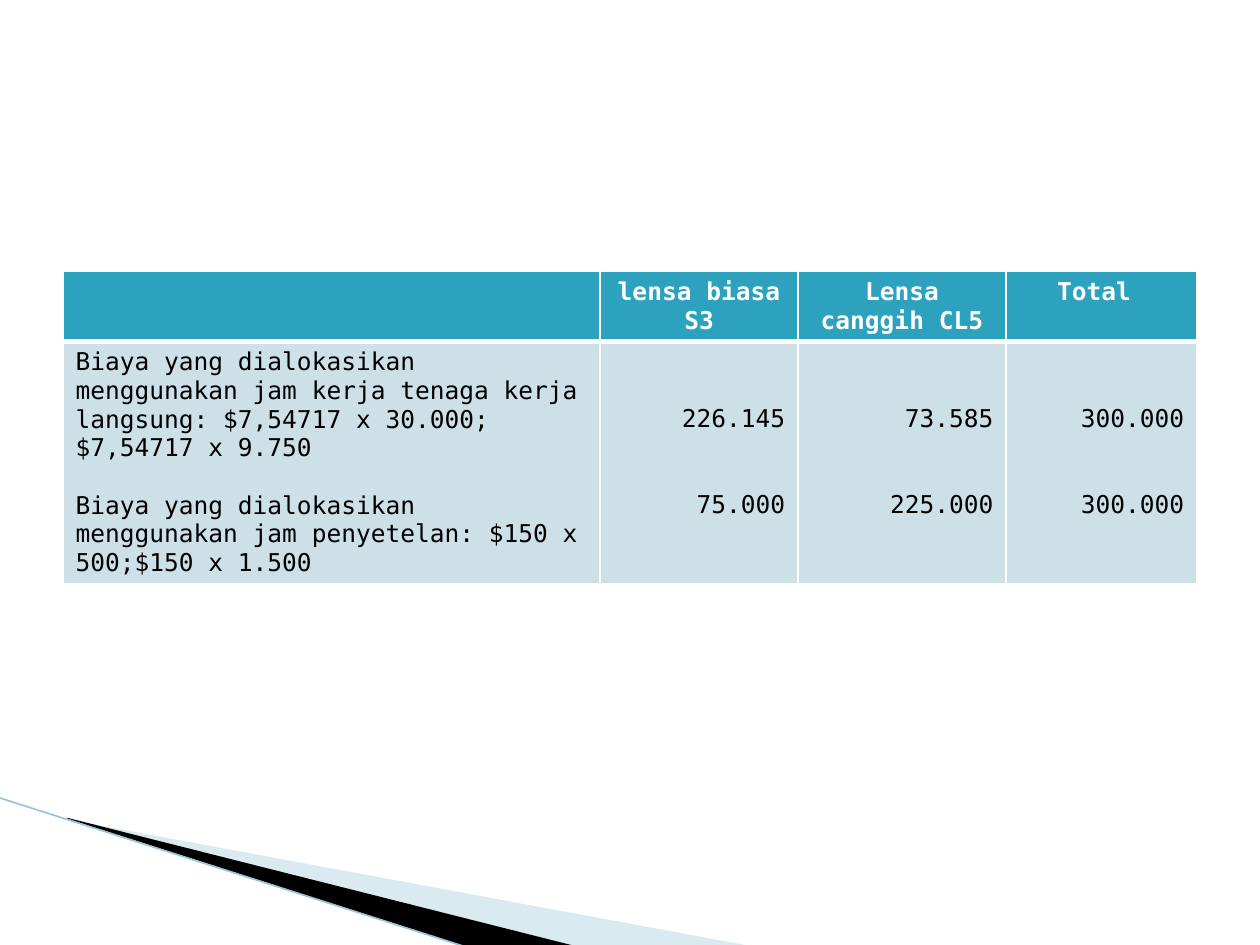
import pptx
import pptx.dml.color
import pptx.enum.text
import pptx.oxml
import pptx.oxml.ns
import pptx.util
from lxml import etree

Pt = pptx.util.Pt
ALIGN = pptx.enum.text.PP_ALIGN
COLORS = {
    "header": "2DA2BF",
    "body": "CDE0E8",
    "border": "FFFFFF",
    "light": "FFFFFF",
    "dark": "000000",
    "pale_wedge": "A0CBDC",
    "edge": "97C5D8",
}
LINE_HEIGHT = 16.3
CELL_MARGIN = 3.6


def rgb(name):
    return pptx.dml.color.RGBColor.from_string(COLORS[name])


class SlideBuilder:
    """Holds the text style and the slide being built."""

    font_name = "DejaVu Sans Mono"
    font_size = 14

    def __init__(self, page):
        self.page = page

    def wedge(self, points, color, opacity=None):
        start, *others = [(Pt(x), Pt(y)) for x, y in points]
        outline = self.page.shapes.build_freeform(*start)
        outline.add_line_segments(others)
        shape = outline.convert_to_shape()
        shape.shadow.inherit = False
        shape.line.fill.background()
        shape.fill.solid()
        shape.fill.fore_color.rgb = rgb(color)
        if opacity is not None:
            node = shape.fill._xPr.find(".//" + pptx.oxml.ns.qn("a:srgbClr"))
            etree.SubElement(node, pptx.oxml.ns.qn("a:alpha"), val=str(opacity * 1000))

    def line(self, start, end, color, width):
        ends = [Pt(value) for value in (*start, *end)]
        connector = self.page.shapes.add_connector(1, *ends)
        connector.line.color.rgb = rgb(color)
        connector.line.width = Pt(width)
        etree.SubElement(connector._element.spPr, pptx.oxml.ns.qn("a:effectLst"))

    def table(self, left, top, widths, heights):
        table = self.page.shapes.add_table(
            len(heights), len(widths), Pt(left), Pt(top), Pt(sum(widths)), Pt(sum(heights))
        ).table
        for column, width in zip(table.columns, widths):
            column.width = Pt(width)
        for row, height in zip(table.rows, heights):
            row.height = Pt(height)
        return table

    def cell(self, cell, texts, fill, color, align, bold=False, lines_above=0, gap_lines=0, bottom=1):
        """Fill one cell; lines_above and gap_lines count text lines of white space."""
        self.borders(cell, bottom)
        cell.fill.solid()
        cell.fill.fore_color.rgb = rgb(fill)
        cell.margin_top = Pt(CELL_MARGIN + lines_above * LINE_HEIGHT)
        cell.text = "\n".join(texts)
        for index, para in enumerate(cell.text_frame.paragraphs):
            para.alignment = align
            if index:
                para.space_before = Pt(gap_lines * LINE_HEIGHT)
            para.font.name = self.font_name
            para.font.size = Pt(self.font_size)
            para.font.bold = bold
            para.font.color.rgb = rgb(color)

    def borders(self, cell, bottom):
        properties = cell._tc.get_or_add_tcPr()
        for side, width in (("L", 1), ("R", 1), ("T", 1), ("B", bottom)):
            properties.append(pptx.oxml.parse_xml(
                f'<a:ln{side} {pptx.oxml.ns.nsdecls("a")} w="{Pt(width)}"><a:solidFill>'
                f'<a:srgbClr val="{COLORS["border"]}"/></a:solidFill></a:ln{side}>'
            ))


def main():
    deck = pptx.Presentation()
    deck.slide_width, deck.slide_height = Pt(720), Pt(540)
    builder = SlideBuilder(deck.slides.add_slide(deck.slide_layouts[6]))

    builder.wedge([(39.6, 468.5), (428.4, 540.5), (328.3, 540.5), (39.6, 468)], "pale_wedge", 40)
    builder.wedge([(38.2, 467.3), (329, 540.7), (267.8, 541.4), (38.9, 468)], "dark")
    builder.line((-0.7, 455.8), (267.1, 541.4), "edge", 0.95)

    table = builder.table(36, 155, widths=[307, 113, 119, 109], heights=[40, 138])
    headings = ["", "lensa biasa S3", "Lensa canggih CL5", "Total "]
    descriptions = [
        "Biaya yang dialokasikan menggunakan jam kerja tenaga kerja langsung: "
        "$7,54717 x 30.000; $7,54717 x 9.750",
        "Biaya yang dialokasikan menggunakan jam penyetelan: $150 x 500;$150 x 1.500",
    ]
    amounts = [("226.145", "75.000"), ("73.585", "225.000"), ("300.000", "300.000")]

    for column, heading in enumerate(headings):
        builder.cell(table.cell(0, column), [heading], "header", "light", ALIGN.CENTER,
                     bold=True, bottom=3)
    builder.cell(table.cell(1, 0), descriptions, "body", "dark", ALIGN.LEFT, gap_lines=1)
    for column, pair in enumerate(amounts, start=1):
        builder.cell(table.cell(1, column), pair, "body", "dark", ALIGN.RIGHT,
                     lines_above=2, gap_lines=2)

    deck.save("out.pptx")


if __name__ == "__main__":
    main()
